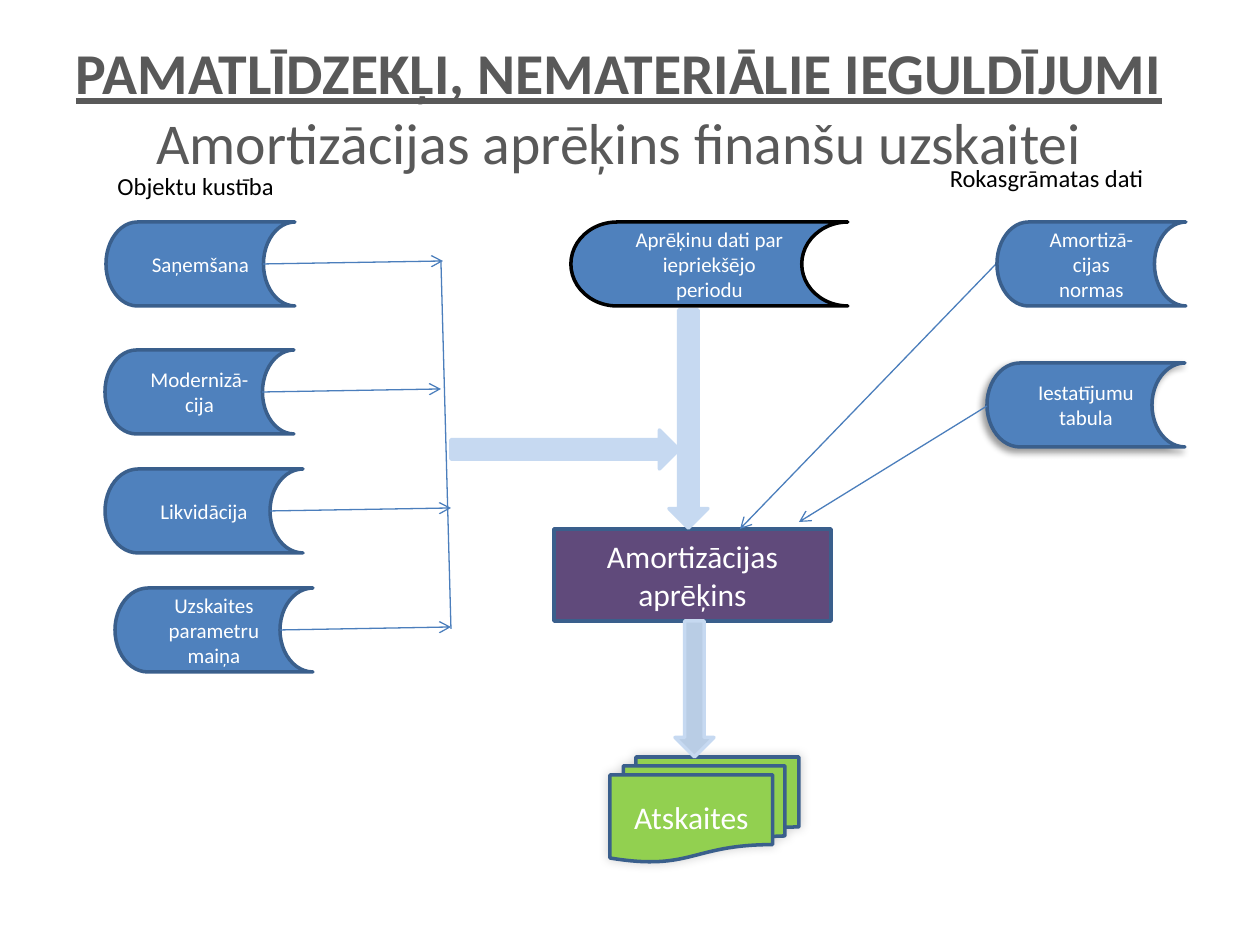
import dataclasses
import typing

import lxml.etree
import pptx
import pptx.dml.color
import pptx.enum.shapes
import pptx.enum.text
import pptx.oxml.ns
import pptx.util

PX = 914400 // 126
Shape = pptx.enum.shapes.MSO_SHAPE
Align = pptx.enum.text.PP_ALIGN
Anchor = pptx.enum.text.MSO_ANCHOR


@dataclasses.dataclass(frozen=True)
class Theme:
    font: str = "Calibri"
    white: str = "FFFFFF"
    black: str = "000000"
    heading: str = "595959"
    store: str = "4F81BD"
    border: str = "3A5F8C"
    process: str = "604A7B"
    report: str = "92D050"
    flow: str = "C6D9F1"
    flow_dark: str = "B9CDE5"
    link: str = "4B7EBC"
    title_size: int = 33
    main_size: int = 18
    label_size: int = 14
    store_size: int = 12
    border_width: float = 2
    link_width: float = 0.75


THEME = Theme()


class Shadow(typing.NamedTuple):
    opacity: int
    blur: int
    distance: int
    angle: int


@dataclasses.dataclass(frozen=True)
class Node:
    left: int
    top: int
    width: int
    height: int
    text: str = ""
    kind: Shape = Shape.FLOWCHART_STORED_DATA
    fill: str = THEME.store
    border: str = THEME.border
    size: int = THEME.store_size
    color: str = THEME.white
    shadow: typing.Optional[Shadow] = None


class Link(typing.NamedTuple):
    start: tuple[int, int]
    end: tuple[int, int]
    arrow: bool = True


def rgb(value: str) -> pptx.dml.color.RGBColor:
    return pptx.dml.color.RGBColor.from_string(value)


def put_text(frame, text: str, *, size: int, color: str, bold: bool = False,
             underline: bool = False, align=Align.CENTER, anchor=Anchor.MIDDLE) -> None:
    frame.word_wrap = True
    frame.vertical_anchor = anchor
    paragraph = frame.paragraphs[0]
    paragraph.alignment = align
    run = paragraph.add_run()
    run.text = text
    run.font.name = THEME.font
    run.font.size = pptx.util.Pt(size)
    run.font.bold = bold
    run.font.underline = underline
    run.font.color.rgb = rgb(color)


def add_child(parent, tag: str, **attributes: str):
    return lxml.etree.SubElement(parent, pptx.oxml.ns.qn(tag), attributes)


def cast_shadow(shape, shadow: Shadow) -> None:
    effects = shape._element.spPr.find(pptx.oxml.ns.qn("a:effectLst"))
    outer = add_child(effects, "a:outerShdw",
                      blurRad=str(pptx.util.Pt(shadow.blur)),
                      dist=str(pptx.util.Pt(shadow.distance)),
                      dir=str(shadow.angle * 60000), algn="ctr", rotWithShape="0")
    tint = add_child(outer, "a:srgbClr", val=THEME.black)
    add_child(tint, "a:alpha", val=str(shadow.opacity * 1000))


def draw_node(slide, node: Node) -> None:
    shape = slide.shapes.add_shape(
        node.kind, node.left * PX, node.top * PX, node.width * PX, node.height * PX)
    shape.shadow.inherit = False
    shape.fill.solid()
    shape.fill.fore_color.rgb = rgb(node.fill)
    shape.line.color.rgb = rgb(node.border)
    shape.line.width = pptx.util.Pt(THEME.border_width)
    if node.shadow:
        cast_shadow(shape, node.shadow)
    if node.text:
        put_text(shape.text_frame, node.text, size=node.size, color=node.color)


def draw_link(slide, link: Link) -> None:
    connector = slide.shapes.add_connector(
        pptx.enum.shapes.MSO_CONNECTOR.STRAIGHT,
        *(value * PX for value in link.start + link.end))
    connector.line.color.rgb = rgb(THEME.link)
    connector.line.width = pptx.util.Pt(THEME.link_width)
    if link.arrow:
        add_child(connector.line._get_or_add_ln(), "a:tailEnd", type="arrow")
    add_child(connector._element.spPr, "a:effectLst")


def add_text_area(slide, left: int, top: int, width: int, height: int):
    return slide.shapes.add_textbox(
        left * PX, top * PX, width * PX, height * PX).text_frame


def movement_link(node: Node, end_x: int) -> Link:
    middle = node.top + node.height // 2
    return Link((node.left + node.width * 5 // 6, middle), (end_x, middle - 3))


MOVEMENTS = [
    (Node(106, 222, 189, 84, "Saņemšana"), 443),
    (Node(105, 350, 189, 84, "Modernizā-cija"), 441),
    (Node(105, 469, 198, 84, "Likvidācija"), 451),
    (Node(115, 588, 198, 84, "Uzskaites parametru maiņa"), 451),
]

MAIN_NODES = [
    Node(571, 222, 277, 84, "Aprēķinu dati par iepriekšējo periodu", border=THEME.black),
    Node(554, 529, 277, 92, "Amortizācijas aprēķins", Shape.FLOWCHART_PROCESS,
         THEME.process, size=THEME.main_size),
    Node(610, 757, 189, 105, "Atskaites", Shape.FLOWCHART_MULTIDOCUMENT,
         THEME.report, size=THEME.main_size, shadow=Shadow(20, 6, 0, 225)),
    Node(987, 363, 198, 84, "Iestatījumu tabula", shadow=Shadow(40, 4, 3, 135)),
]

FLOWS_AND_NORMS = [
    Node(675, 621, 39, 136, kind=Shape.DOWN_ARROW, fill=THEME.flow_dark, border=THEME.flow),
    Node(669, 310, 39, 218, kind=Shape.DOWN_ARROW, fill=THEME.flow, border=THEME.flow),
    Node(451, 430, 228, 39, kind=Shape.RIGHT_ARROW, fill=THEME.flow, border=THEME.flow),
    Node(997, 222, 189, 84, "Amortizā-cijas normas"),
    Node(898, 163, 297, 30, "Rokasgrāmatas dati", Shape.RECTANGLE, THEME.white,
         THEME.white, THEME.label_size, THEME.black),
]

LINKS = [movement_link(node, end_x) for node, end_x in MOVEMENTS] + [
    Link((997, 263), (740, 529)),
    Link((987, 406), (799, 522)),
    Link((441, 262), (451, 629), arrow=False),
]


def main() -> None:
    presentation = pptx.Presentation()
    presentation.slide_width = 1260 * PX
    presentation.slide_height = 945 * PX
    slide = presentation.slides.add_slide(presentation.slide_layouts[6])

    for node in MAIN_NODES + [movement for movement, _ in MOVEMENTS]:
        draw_node(slide, node)
    for link in LINKS:
        draw_link(slide, link)
    for node in FLOWS_AND_NORMS:
        draw_node(slide, node)

    movement_label = add_text_area(slide, 105, 165, 328, 43)
    put_text(movement_label, "Objektu kustība", size=THEME.label_size,
             color=THEME.black, align=Align.LEFT, anchor=Anchor.TOP)

    title = add_text_area(slide, 52, 28, 1134, 157)
    put_text(title, "PAMATLĪDZEKĻI, NEMATERIĀLIE IEGULDĪJUMI", size=THEME.title_size,
             color=THEME.heading, bold=True, underline=True)
    title.paragraphs[0].add_line_break()
    put_text(title, "Amortizācijas aprēķins finanšu uzskaitei", size=THEME.title_size,
             color=THEME.heading)

    presentation.save("out.pptx")


if __name__ == "__main__":
    main()
